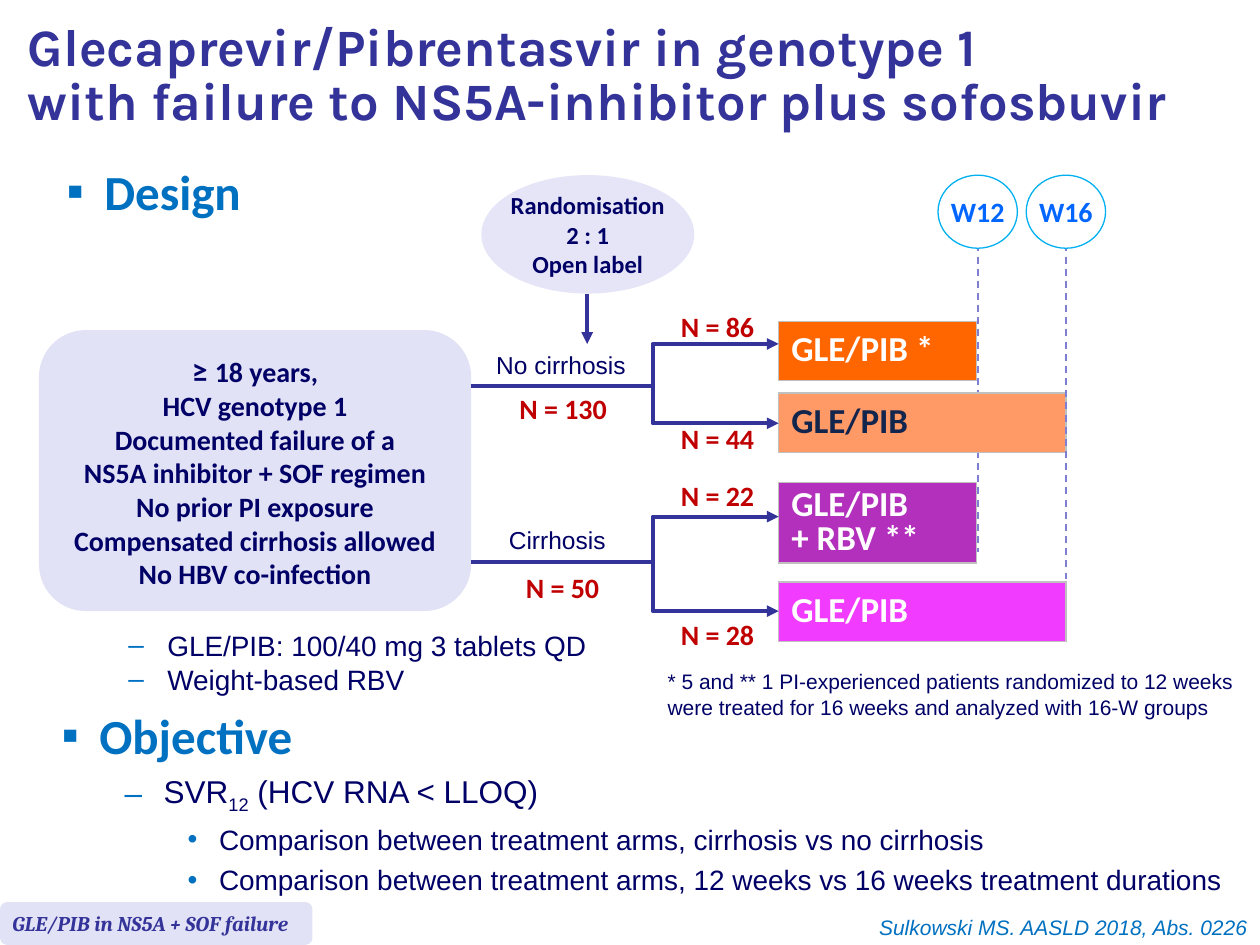
from dataclasses import dataclass
from itertools import zip_longest

import pptx
import pptx.dml.color
import pptx.enum.dml
import pptx.enum.shapes
import pptx.enum.text
import pptx.oxml.ns
import pptx.util
from lxml import etree

RGBColor = pptx.dml.color.RGBColor
Shape = pptx.enum.shapes.MSO_SHAPE
Align = pptx.enum.text.PP_ALIGN
Anchor = pptx.enum.text.MSO_ANCHOR
qn = pptx.oxml.ns.qn

INDIGO = RGBColor(0x33, 0x33, 0x99)
NAVY = RGBColor(0x00, 0x00, 0x66)
DARK_NAVY = RGBColor(0x12, 0x25, 0x4C)
BLUE = RGBColor(0x00, 0x70, 0xC0)
VISIT_BLUE = RGBColor(0x00, 0x66, 0xFF)
SKY = RGBColor(0x00, 0xB0, 0xF0)
PERIWINKLE = RGBColor(0x7E, 0x7E, 0xD4)
LAVENDER = RGBColor(0xE2, 0xE2, 0xF6)
PALE_LAVENDER = RGBColor(0xE5, 0xE5, 0xF7)
RED = RGBColor(0xC0, 0x00, 0x00)
WHITE = RGBColor(0xFF, 0xFF, 0xFF)
SILVER = RGBColor(0xC0, 0xC0, 0xC0)
ORANGE = RGBColor(0xFF, 0x66, 0x00)
LIGHT_ORANGE = RGBColor(0xFF, 0x99, 0x66)
PURPLE = RGBColor(0xB2, 0x30, 0xBC)
MAGENTA = RGBColor(0xF1, 0x3B, 0xFE)

COLUMNS, ROWS = 100, 75
ARM_LEFT = 61.8
BRACKET_LEFT = 51.8


@dataclass(frozen=True)
class Box:
    left: float
    top: float
    width: float
    height: float

    def emu(self):
        return [grid(value) for value in (self.left, self.top, self.width, self.height)]


@dataclass(frozen=True)
class Arm:
    text: str
    box: Box
    fill: RGBColor
    color: RGBColor
    patients: str
    patients_top: float


@dataclass(frozen=True)
class Visit:
    text: str
    center: float
    line_end: float


@dataclass(frozen=True)
class Stratum:
    label: Box
    text: str
    count: Box
    patients: str
    line_row: float
    arrow_rows: tuple


ARMS = [
    Arm("GLE/PIB *", Box(ARM_LEFT, 25.5, 15.7, 4.7), ORANGE, WHITE, "N = 86", 24.1),
    Arm("GLE/PIB", Box(ARM_LEFT, 31.2, 22.8, 4.7), LIGHT_ORANGE, DARK_NAVY, "N = 44", 33),
    Arm("GLE/PIB\v+ RBV **", Box(ARM_LEFT, 38.3, 15.7, 6.4), PURPLE, WHITE, "N = 22", 37.5),
    Arm("GLE/PIB", Box(ARM_LEFT, 46.2, 22.8, 4.7), MAGENTA, WHITE, "N = 28", 48.5),
]
VISITS = [Visit("W12", 77.6, 43.8), Visit("W16", 84.6, 49.7)]
STRATA = [
    Stratum(Box(38.4, 27.3, 12.4, 3.4), "No cirrhosis",
            Box(40.2, 30.6, 9, 3.7), "N = 130", 30.6, (27.3, 33.6)),
    Stratum(Box(39.4, 41.2, 9.8, 3.4), "Cirrhosis",
            Box(40.7, 44.8, 7.9, 3.7), "N = 50", 44.6, (41, 48.5)),
]


def grid(cells: float) -> int:
    """Length of a number of columns or rows, each a tenth of an inch."""
    return pptx.util.Inches(cells / 10)


def write(frame, text, *, size, color, font="Calibri", bold=False, italic=False,
          align=Align.LEFT, spacing=None, before=None, bullet=None, indent=(0, 0)):
    """Add one paragraph per line; '|' starts a new run and '\\v' breaks a line."""
    for line in text.split("\n"):
        unused = len(frame.paragraphs) == 1 and not frame.paragraphs[0].runs
        paragraph = frame.paragraphs[0] if unused else frame.add_paragraph()
        paragraph.alignment = align
        if bullet:
            properties = paragraph._p.get_or_add_pPr()
            properties.set("marL", str(grid(indent[0])))
            properties.set("indent", str(grid(indent[1])))
            bullet_color = etree.SubElement(properties, qn("a:buClr"))
            etree.SubElement(bullet_color, qn("a:srgbClr"), val=str(BLUE))
            etree.SubElement(properties, qn("a:buFont"), typeface="Arial")
            etree.SubElement(properties, qn("a:buChar"), char=bullet)
        if spacing:
            paragraph.line_spacing = spacing
        if before:
            paragraph.space_before = pptx.util.Pt(before)
        for index, part in enumerate(line.split("\v")):
            if index:
                paragraph.add_line_break()
            for piece in part.split("|"):
                run = paragraph.add_run()
                run.text = piece
                run.font.size = pptx.util.Pt(size)
                run.font.name = font
                run.font.bold = bold
                run.font.italic = italic
                run.font.color.rgb = color
    return paragraph


def add_text_box(slide, box: Box, wrap=False, anchor=Anchor.TOP):
    frame = slide.shapes.add_textbox(*box.emu()).text_frame
    frame.word_wrap = wrap
    frame.vertical_anchor = anchor
    return frame


def add_panel(slide, kind, box: Box, fill: RGBColor, outline=None):
    shape = slide.shapes.add_shape(kind, *box.emu())
    shape.shadow.inherit = False
    shape.fill.solid()
    shape.fill.fore_color.rgb = fill
    if outline:
        shape.line.color.rgb = outline
        shape.line.width = pptx.util.Pt(0.75)
    else:
        shape.line.fill.background()
    shape.text_frame.word_wrap = False
    shape.text_frame.vertical_anchor = Anchor.MIDDLE
    return shape.text_frame


def style_line(line, color=INDIGO, width=2.25, arrows=()):
    line.color.rgb = color
    line.width = pptx.util.Pt(width)
    for end in arrows:
        etree.SubElement(line._get_or_add_ln(), qn(f"a:{end}"), type="triangle")


def add_line(slide, start, end, **style):
    points = [grid(value) for value in (*start, *end)]
    connector = slide.shapes.add_connector(pptx.enum.shapes.MSO_CONNECTOR.STRAIGHT, *points)
    style_line(connector.line, **style)
    etree.SubElement(connector._element.spPr, qn("a:effectLst"))
    return connector


def add_bracket(slide, top: float, bottom: float):
    builder = slide.shapes.build_freeform(grid(ARM_LEFT), grid(top))
    corners = [(BRACKET_LEFT, top), (BRACKET_LEFT, bottom), (ARM_LEFT, bottom)]
    builder.add_line_segments([(grid(x), grid(y)) for x, y in corners], close=False)
    bracket = builder.convert_to_shape()
    bracket.shadow.inherit = False
    bracket.fill.background()
    style_line(bracket.line, arrows=("headEnd", "tailEnd"))


def add_count(slide, box: Box, text: str):
    write(add_text_box(slide, box), text, size=16, color=RED, bold=True, align=Align.CENTER)


def add_arm(slide, arm: Arm):
    table = slide.shapes.add_table(1, 1, *arm.box.emu()).table
    table.first_row = table.horz_banding = False
    cell = table.cell(0, 0)
    properties = cell._tc.get_or_add_tcPr()
    for side in "LRTB":
        border = etree.SubElement(properties, qn(f"a:ln{side}"), w=str(pptx.util.Pt(1)))
        border_fill = etree.SubElement(border, qn("a:solidFill"))
        etree.SubElement(border_fill, qn("a:srgbClr"), val=str(SILVER))
    cell.fill.solid()
    cell.fill.fore_color.rgb = arm.fill
    cell.vertical_anchor = Anchor.MIDDLE
    write(cell.text_frame, arm.text, size=20, color=arm.color, bold=True, spacing=0.8)
    add_count(slide, Box(53, arm.patients_top, 7.9, 3.7), arm.patients)


def add_visit(slide, visit: Visit):
    line = add_line(slide, (visit.center, 19.4), (visit.center, visit.line_end),
                    color=PERIWINKLE, width=1)
    line.line.dash_style = pptx.enum.dml.MSO_LINE.DASH
    circle = add_panel(slide, Shape.OVAL, Box(visit.center - 3.15, 13.9, 6.3, 5.8), WHITE, SKY)
    write(circle, visit.text, size=16, color=VISIT_BLUE, bold=True, align=Align.CENTER)


def add_stratum(slide, stratum: Stratum):
    add_line(slide, (37.4, stratum.line_row), (52, stratum.line_row))
    add_bracket(slide, *stratum.arrow_rows)
    write(add_text_box(slide, stratum.label), stratum.text, size=14, color=NAVY, font="Arial")
    add_count(slide, stratum.count, stratum.patients)


def main():
    presentation = pptx.Presentation()
    presentation.slide_width, presentation.slide_height = grid(COLUMNS), grid(ROWS)
    slide = presentation.slides.add_slide(presentation.slide_layouts[6])
    body = dict(color=NAVY, font="Arial")
    heading = dict(size=28, color=BLUE, bold=True, bullet="▪", indent=(3, -3))
    centered = dict(color=NAVY, bold=True, align=Align.CENTER)

    title = add_text_box(slide, Box(1.2, 0.8, 98.8, 10.7), True, Anchor.MIDDLE)
    write(title, "Glecaprevir/Pibrentasvir in genotype 1\vwith failure to NS5A-inhibitor plus sofosbuvir",
          size=30, color=INDIGO, font="Karla", bold=True, spacing=0.85)
    write(add_text_box(slide, Box(4.3, 12.3, 17.3, 4.7), True), "Design", **heading)

    add_line(slide, (46.6, 23.3), (46.6, 27.3), arrows=("tailEnd",))
    randomisation = add_panel(slide, Shape.OVAL, Box(38.2, 13.9, 16.9, 9.4), PALE_LAVENDER)
    write(randomisation, "Randomisation\n2 : 1\nOpen label", size=14, **centered)
    criteria = add_panel(slide, Shape.ROUNDED_RECTANGLE, Box(3.1, 26.2, 34.3, 22.3), LAVENDER)
    write(criteria, "≥\u00a0|18 years,\nHCV genotype 1\nDocumented failure of a\n"
          "NS5A inhibitor + SOF regimen\nNo prior PI exposure\n"
          "Compensated cirrhosis allowed\nNo HBV co-infection", size=16, **centered)
    criteria.paragraphs[0].runs[0].font.size = pptx.util.Pt(18)

    for arm, visit in zip_longest(ARMS, VISITS):
        add_arm(slide, arm)
        if visit:
            add_visit(slide, visit)
    for stratum in STRATA:
        add_stratum(slide, stratum)

    write(add_text_box(slide, Box(9.2, 49.4, 39.5, 6.4)),
          "GLE/PIB: 100/40 mg 3 tablets QD\nWeight-based RBV",
          size=16, bullet="‒", indent=(3.1, -3.1), **body)
    write(add_text_box(slide, Box(52, 52.6, 47.2, 5)),
          "* 5 and ** 1 PI-experienced patients randomized to 12 weeks\n"
          "were treated for 16 weeks and analyzed with 16-W groups", size=12, **body)

    objective = add_text_box(slide, Box(3.9, 55.5, 94.5, 15.9), True)
    write(objective, "Objective", **heading)
    response = write(objective, "SVR|12| (HCV RNA < LLOQ)", size=18, before=4.5,
                     bullet="–", indent=(8.1, -3.1), **body)
    response.runs[1]._r.get_or_add_rPr().set("baseline", "-25000")
    write(objective, "Comparison between treatment arms, cirrhosis vs no cirrhosis\n"
          "Comparison between treatment arms, 12 weeks vs 16 weeks treatment durations",
          size=16, before=4, bullet="•", indent=(12.5, -2.5), **body)

    add_panel(slide, Shape.ROUNDED_RECTANGLE, Box(0, 71.6, 24.8, 3.4), LAVENDER)
    write(add_text_box(slide, Box(0, 71.8, 28, 3), True), "GLE/PIB in NS5A + SOF failure",
          size=12, color=INDIGO, font="Cambria", bold=True, italic=True)
    write(add_text_box(slide, Box(26.4, 72.1, 73.6, 2.9), True), "Sulkowski MS. AASLD 2018, Abs. 0226",
          size=12, color=BLUE, font="Arial", italic=True, align=Align.RIGHT)
    presentation.save("out.pptx")


if __name__ == "__main__":
    main()
